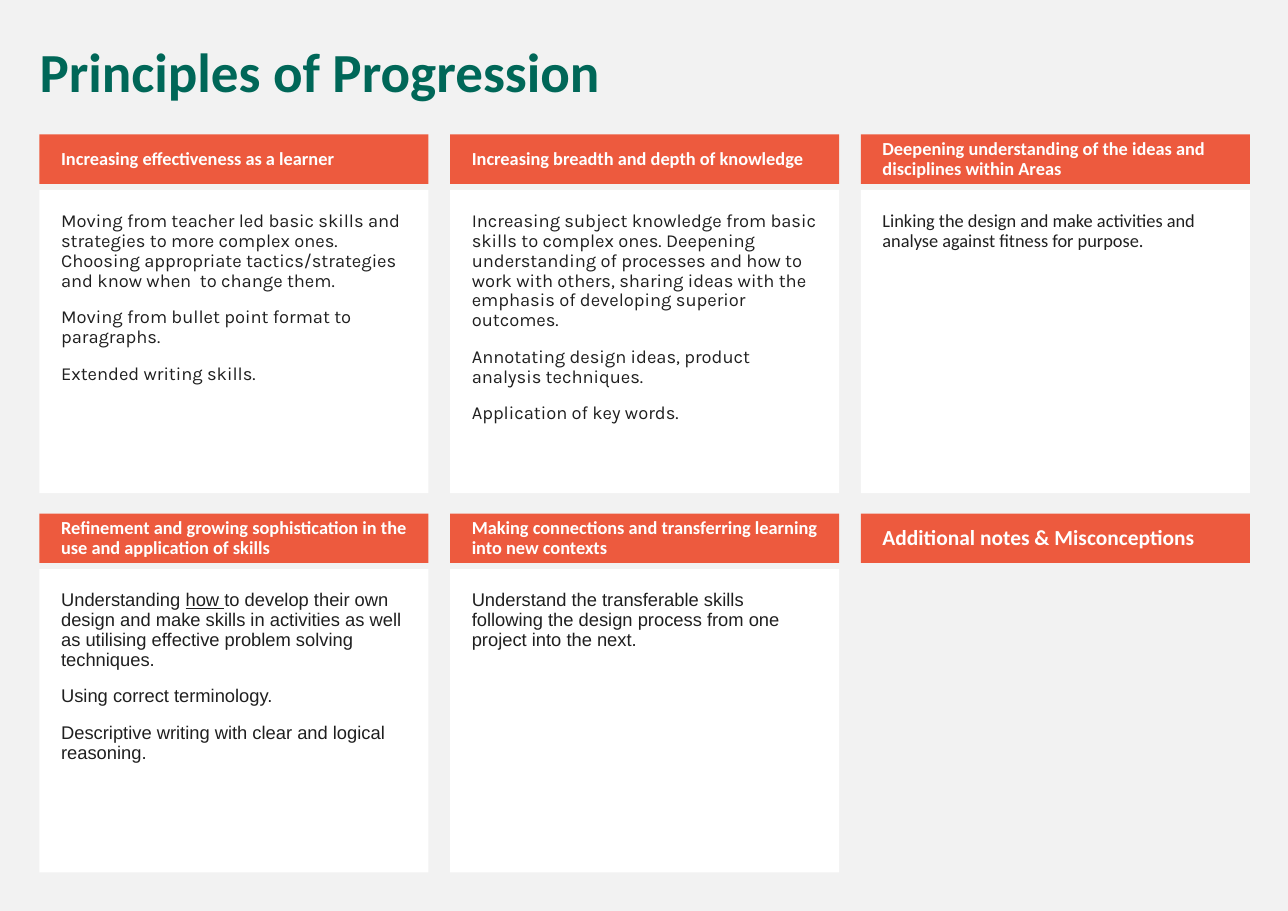
from pptx import Presentation
from pptx.dml.color import RGBColor
from pptx.enum.shapes import MSO_SHAPE
from pptx.enum.text import MSO_ANCHOR, MSO_AUTO_SIZE, PP_ALIGN
from pptx.util import Cm, Pt

RECT = MSO_SHAPE.RECTANGLE
TOP, MIDDLE = MSO_ANCHOR.TOP, MSO_ANCHOR.MIDDLE
NO_FIT = MSO_AUTO_SIZE.NONE
LEFT = PP_ALIGN.LEFT

GREY = RGBColor(0xF2, 0xF2, 0xF2)
WHITE = RGBColor(0xFF, 0xFF, 0xFF)
ORANGE = RGBColor(0xED, 0x5A, 0x3E)
GREEN = RGBColor(0x00, 0x67, 0x58)
INK = RGBColor(0x1F, 0x1F, 0x1F)

GRID_LEFT, GRID_TOP = 0.91, 3.1
COL_PITCH, ROW_PITCH = 9.47, 8.74
CARD_W, HEAD_H, BODY_H, BODY_OFFSET = 8.97, 1.14, 6.99, 1.28

CARDS = [
    ("Increasing effectiveness as a learner", 12, "Karla", [
        ["Moving from teacher led basic skills and strategies to more complex ones.  "
         "Choosing appropriate tactics/strategies and know when  to change them."],
        ["Moving from bullet point format to paragraphs."],
        ["Extended writing skills."]]),
    ("Increasing breadth and depth of knowledge", 12, "Karla", [
        ["Increasing subject knowledge from basic skills to complex ones. Deepening "
         "understanding of processes and how to work with others, sharing ideas with "
         "the emphasis of developing superior outcomes."],
        ["Annotating design ideas, product analysis techniques."],
        ["Application of key words."]]),
    ("Deepening understanding of the ideas and disciplines within Areas", 12, "Calibri", [
        ["Linking the design and make activities and analyse against fitness for purpose."]]),
    ("Refinement and growing sophistication in the use and application of skills", 12, "Arial", [
        ["Understanding ", ("how ", True),
         "to develop their own design and make skills in activities as well "
         "as utilising effective problem solving techniques."],
        ["Using correct terminology."],
        ["Descriptive writing with clear and logical reasoning."]]),
    ("Making connections and transferring learning into new contexts", 12, "Arial", [
        ["Understand the transferable skills following the design process from "
         "one project into the next."]]),
    ("Additional notes & Misconceptions", 14, "Calibri", []),
]


class SlideBuilder:
    def __init__(self, prs):
        self.s = prs.slides.add_slide(prs.slide_layouts[5])
        fill = self.s.background.fill
        fill.solid()
        fill.fore_color.rgb = GREY

    def add_text(self, tf, paragraphs, font, size, color, bold=False):
        tf.word_wrap = True
        tf.auto_size = NO_FIT
        for i, runs in enumerate(paragraphs):
            p = tf.add_paragraph() if i else tf.paragraphs[0]
            p.alignment = LEFT
            p.line_spacing = 0.9
            p.space_before = Pt(11)
            for run in runs:
                text, underline = run if isinstance(run, tuple) else (run, False)
                r = p.add_run()
                r.text = text
                r.font.name = font
                r.font.size = Pt(size)
                r.font.bold = bold
                r.font.underline = underline
                r.font.color.rgb = color

    def title(self, text):
        sp = self.s.shapes.title
        sp.left, sp.top, sp.width, sp.height = Cm(0.66), Cm(0.91), Cm(28.14), Cm(1.65)
        sp.text_frame.vertical_anchor = TOP
        self.add_text(sp.text_frame, [[text]], "Calibri", 36, GREEN, True)

    def box(self, x, y, h, color, anchor, margins):
        sp = self.s.shapes.add_shape(RECT, Cm(x), Cm(y), Cm(CARD_W), Cm(h))
        sp.shadow.inherit = False
        sp.fill.solid()
        sp.fill.fore_color.rgb = color
        sp.line.fill.background()
        tf = sp.text_frame
        tf.vertical_anchor = anchor
        tf.margin_left, tf.margin_top, tf.margin_right, tf.margin_bottom = map(Cm, margins)
        return tf

    def card(self, x, y, heading, size, font, paragraphs):
        tf = self.box(x, y, HEAD_H, ORANGE, MIDDLE, (0.5, 0.13, 0.25, 0.13))
        self.add_text(tf, [[heading]], "Calibri", size, WHITE, True)
        if paragraphs:
            tf = self.box(x, y + BODY_OFFSET, BODY_H, WHITE, TOP, (0.5,) * 4)
            self.add_text(tf, paragraphs, font, 12, INK)


def main():
    prs = Presentation()
    prs.slide_width, prs.slide_height = Cm(29.7), Cm(21)
    builder = SlideBuilder(prs)
    builder.title("Principles of Progression")
    for i, card in enumerate(CARDS):
        row, col = divmod(i, 3)
        builder.card(GRID_LEFT + col * COL_PITCH, GRID_TOP + row * ROW_PITCH, *card)
    prs.save("out.pptx")


if __name__ == "__main__":
    main()
